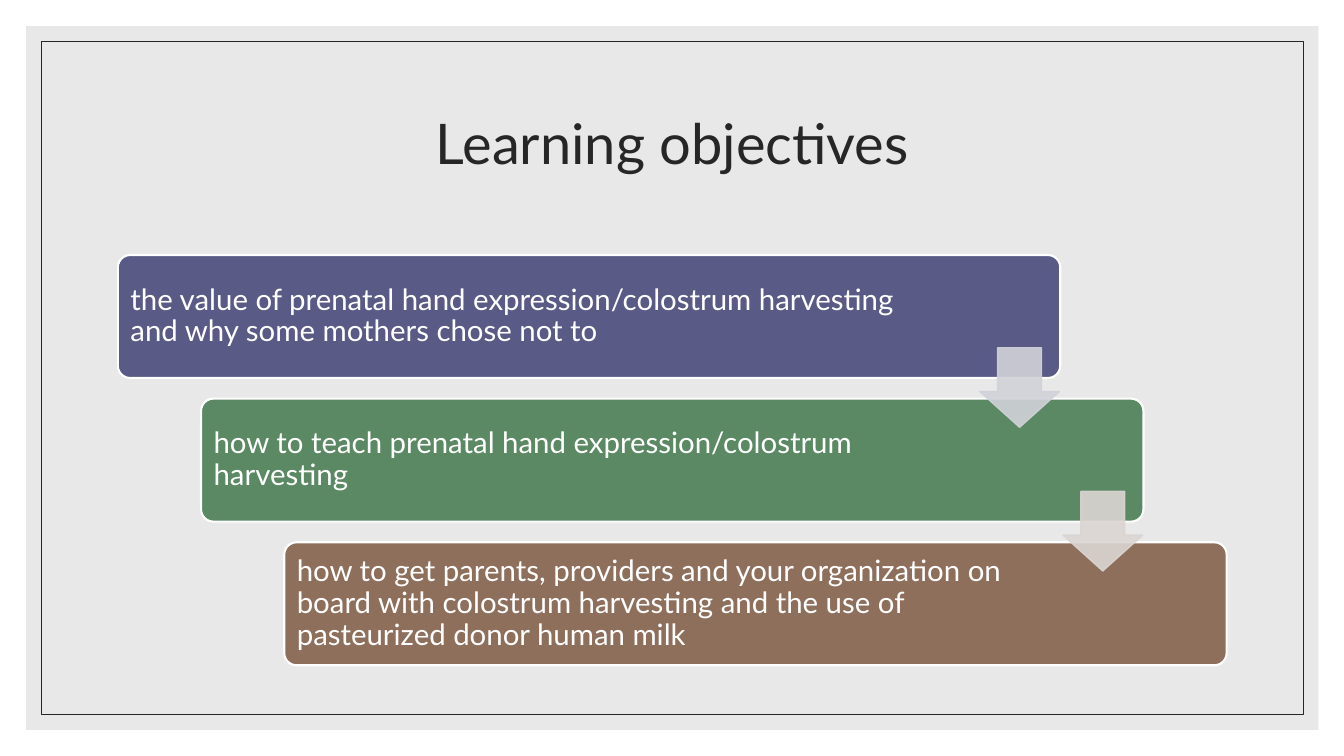
from lxml import etree
from pptx import Presentation
from pptx.dml.color import RGBColor
from pptx.enum.shapes import MSO_SHAPE
from pptx.enum.text import MSO_ANCHOR, PP_ALIGN
from pptx.oxml.ns import qn
from pptx.util import Inches, Pt

RECTANGLE = MSO_SHAPE.RECTANGLE
ROUNDED = MSO_SHAPE.ROUNDED_RECTANGLE
DOWN_ARROW = MSO_SHAPE.DOWN_ARROW
MIDDLE = MSO_ANCHOR.MIDDLE
LEFT, CENTER = PP_ALIGN.LEFT, PP_ALIGN.CENTER

WHITE, INK, GREY = "FFFFFF", "262626", "D9D9D9"

OBJECTIVES = [
    ("the value of prenatal hand expression/colostrum harvesting "
     "and why some mothers chose not to", "595A85", 60.22),
    ("how to teach prenatal hand expression/colostrum harvesting", "5A8963", 57.45),
    ("how to get parents, providers and your organization on board with "
     "colostrum harvesting and the use of pasteurized donor human milk", "8D6F5B", 57.45),
]
ARROW_COLOURS = ["D1D2D9", "DBD5D2"]

# Percent of the slide's width and height
BAR_LEFT, BAR_TOP, BAR_WIDTH, BAR_HEIGHT = 8.77, 33.73, 70.12, 16.27
STEP_RIGHT, STEP_DOWN = 6.19, 19
TEXT_INDENT, TEXT_DROP, TEXT_HEIGHT = 0.26, 0.47, 15.33
ARROW_LEFT, ARROW_TOP, ARROW_WIDTH, ARROW_HEIGHT = 72.9, 46, 5.93, 10.53


def paint(color_format, colour, opacity=100):
    """Set a solid fill's colour and its opacity in percent."""
    color_format.fore_color.rgb = RGBColor.from_string(colour)
    if opacity < 100:
        element = color_format.fore_color._xFill.find(qn("a:srgbClr"))
        etree.SubElement(element, qn("a:alpha"), val=str(opacity * 1000))


class SlideBuilder:
    """Draws on one slide; every box is left, top, width, height in percent."""

    font = "Lato"

    def __init__(self, presentation):
        self.width = presentation.slide_width
        self.height = presentation.slide_height
        self.slide = presentation.slides.add_slide(presentation.slide_layouts[6])

    def place(self, box):
        left, top, width, height = box
        return (round(self.width * left / 100), round(self.height * top / 100),
                round(self.width * width / 100), round(self.height * height / 100))

    def shape(self, kind, box, fill=None, line=None, line_width=1, opacity=100,
              adjustments=()):
        shape = self.slide.shapes.add_shape(kind, *self.place(box))
        shape.shadow.inherit = False
        for index, value in enumerate(adjustments):
            shape.adjustments[index] = value
        if fill:
            shape.fill.solid()
            paint(shape.fill, fill, opacity)
        else:
            shape.fill.background()
        if line:
            shape.line.width = Pt(line_width)
            shape.line.fill.solid()
            paint(shape.line.fill, line, opacity)
        else:
            shape.line.fill.background()

    def text(self, box, words, size, colour, alignment=LEFT, inset=0.09):
        frame = self.slide.shapes.add_textbox(*self.place(box)).text_frame
        frame.word_wrap = True
        frame.vertical_anchor = MIDDLE
        frame.margin_left = frame.margin_right = Inches(inset)
        frame.margin_top = frame.margin_bottom = Inches(inset)
        paragraph = frame.paragraphs[0]
        paragraph.alignment = alignment
        paragraph.line_spacing = 0.9
        run = paragraph.add_run()
        run.text = words
        run.font.name = self.font
        run.font.size = Pt(size)
        run.font.color.rgb = RGBColor.from_string(colour)


def main():
    presentation = Presentation()
    presentation.slide_width = Inches(13.33)
    presentation.slide_height = Inches(7.5)
    builder = SlideBuilder(presentation)

    builder.shape(RECTANGLE, (0, 0, 100, 100), fill=WHITE)
    builder.shape(RECTANGLE, (1.95, 3.47, 96.15, 93.07), fill=GREY, opacity=60)
    builder.shape(RECTANGLE, (3.08, 5.47, 93.9, 89.07), line=INK, line_width=0.5)
    builder.text((8.77, 9.33, 82.5, 20), "Learning objectives", 40, INK, CENTER)

    for index, (words, colour, text_width) in enumerate(OBJECTIVES):
        left = BAR_LEFT + index * STEP_RIGHT
        top = BAR_TOP + index * STEP_DOWN
        builder.shape(ROUNDED, (left, top, BAR_WIDTH, BAR_HEIGHT), fill=colour,
                      line=WHITE, line_width=1.5, adjustments=[0.1])
        builder.text((left + TEXT_INDENT, top + TEXT_DROP, text_width, TEXT_HEIGHT),
                     words, 21, WHITE)

    for index, colour in enumerate(ARROW_COLOURS):
        box = (ARROW_LEFT + index * STEP_RIGHT, ARROW_TOP + index * STEP_DOWN,
               ARROW_WIDTH, ARROW_HEIGHT)
        # Adjustments run head length first, then shaft width
        builder.shape(DOWN_ARROW, box, fill=colour, line=colour, opacity=90,
                      adjustments=[0.55, 0.45])

    presentation.save("out.pptx")


if __name__ == "__main__":
    main()
